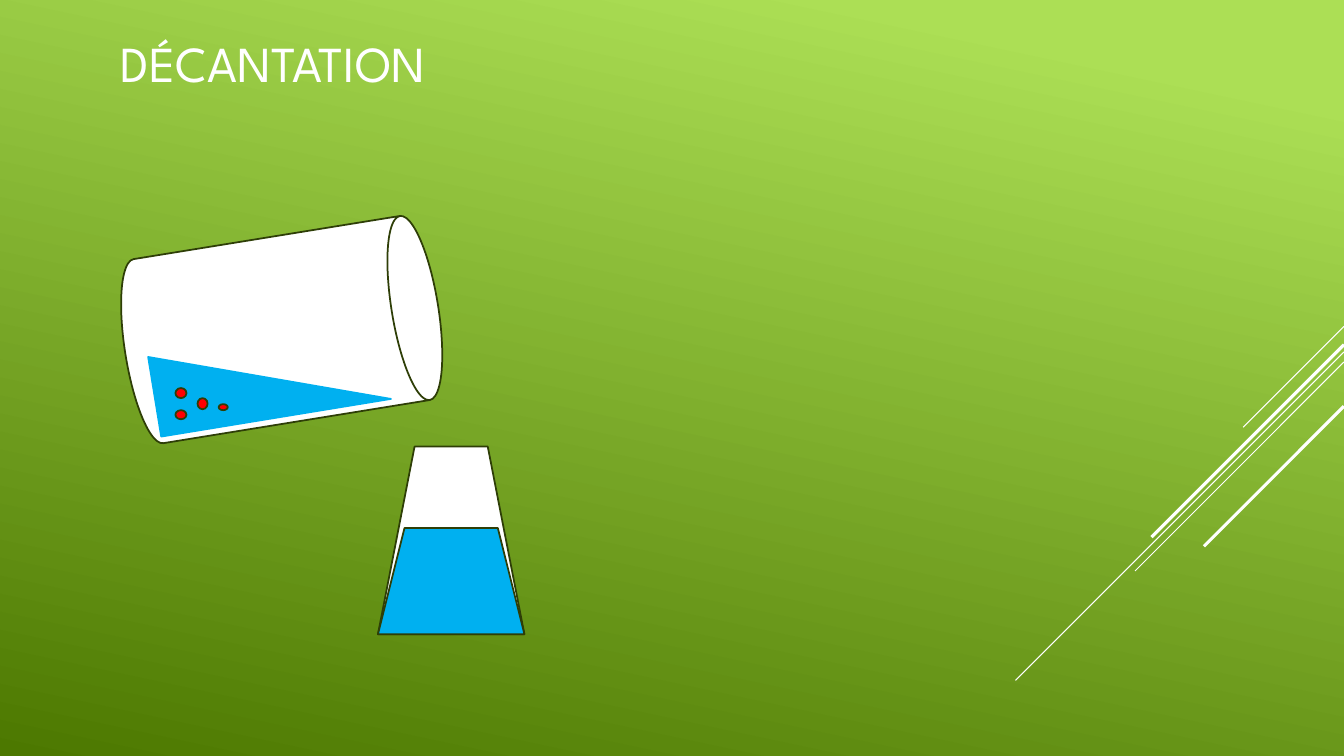
from dataclasses import dataclass

from lxml import etree
from pptx import Presentation
from pptx.dml.color import RGBColor
from pptx.enum.shapes import MSO_CONNECTOR, MSO_SHAPE
from pptx.enum.text import MSO_ANCHOR
from pptx.oxml.ns import qn
from pptx.util import Pt

STRAIGHT = MSO_CONNECTOR.STRAIGHT
CAN = MSO_SHAPE.CAN
RIGHT_TRIANGLE = MSO_SHAPE.RIGHT_TRIANGLE
OVAL = MSO_SHAPE.OVAL
TRAPEZOID = MSO_SHAPE.TRAPEZOID
MIDDLE = MSO_ANCHOR.MIDDLE


@dataclass(frozen=True)
class Theme:
    white: RGBColor = RGBColor.from_string("FFFFFF")
    light: RGBColor = RGBColor.from_string("ACDF55")
    dark: RGBColor = RGBColor.from_string("4C7800")
    outline: RGBColor = RGBColor.from_string("2E3E07")
    water: RGBColor = RGBColor.from_string("00B0F0")
    grain: RGBColor = RGBColor.from_string("FF0000")
    font: str = "League Spartan"
    title_size: float = 36
    outline_width: float = 1.25
    thin: float = 0.75
    thick: float = 2.25


THEME = Theme()
WIDTH, HEIGHT = 960, 540

STREAKS = [
    (233.2, 72, THEME.thin),
    (251.4, 234.6, THEME.thin),
    (258.6, 149.2, THEME.thin),
    (246.2, 137.5, THEME.thick),
    (290.2, 100, THEME.thick),
]
GRAINS = [
    (125.3, 277.2, 7.9, 7.2),
    (141.1, 284.4, 7.2, 7.9),
    (125.3, 293, 7.9, 6.5),
    (156.2, 288.7, 6.5, 4.3),
]
FLASK_LEFT, FLASK_WIDTH, FLASK_BOTTOM = 270, 104.6, 453
FLASK_HEIGHT, LIQUID_HEIGHT = 134, 75.8


def set_attributes(target, values):
    for name, value in values.items():
        setattr(target, name, value)


def paint_background(s):
    fill = s.background.fill
    fill.gradient()
    fill.gradient_angle = 258
    stops = [(0.1, THEME.light), (1, THEME.dark)]
    for stop, (position, color) in zip(fill.gradient_stops, stops):
        stop.position = position
        stop.color.rgb = color


def add_streak(s, top, reach, width):
    line = s.shapes.add_connector(
        STRAIGHT, Pt(WIDTH), Pt(top), Pt(WIDTH - reach), Pt(top + reach))
    line.line.color.rgb = THEME.white
    line.line.width = Pt(width)
    etree.SubElement(line._element.spPr, qn("a:effectLst"))


def add_title(s, text, left, top, width, height):
    box = s.shapes.add_textbox(Pt(left), Pt(top), Pt(width), Pt(height))
    tf = box.text_frame
    set_attributes(tf, {"word_wrap": True, "vertical_anchor": MIDDLE})
    r = tf.paragraphs[0].add_run()
    r.text = text
    set_attributes(r.font, {"name": THEME.font, "size": Pt(THEME.title_size)})
    r.font.color.rgb = THEME.white


def add_figure(s, kind, box, fill, outline=THEME.outline, rotation=0):
    sp = s.shapes.add_shape(kind, *map(Pt, box))
    sp.rotation = rotation
    sp.shadow.inherit = False
    sp.fill.solid()
    sp.fill.fore_color.rgb = fill
    sp.line.color.rgb = outline
    sp.line.width = Pt(THEME.outline_width)


def add_flask_part(s, height, fill):
    box = (FLASK_LEFT, FLASK_BOTTOM - height, FLASK_WIDTH, height)
    add_figure(s, TRAPEZOID, box, fill)


def main():
    prs = Presentation()
    set_attributes(prs, {"slide_width": Pt(WIDTH), "slide_height": Pt(HEIGHT)})
    s = prs.slides.add_slide(prs.slide_layouts[6])
    paint_background(s)
    for streak in STREAKS:
        add_streak(s, *streak)
    add_title(s, "DÉCANTATION", 79.2, -15.1, 671.8, 118.8)
    add_figure(s, CAN, (134.6, 122.4, 133.2, 226), THEME.white, rotation=80.8)
    add_figure(s, RIGHT_TRIANGLE, (109.4, 241.2, 166.3, 57.6), THEME.water,
               THEME.water, 350.7)
    for grain in GRAINS:
        add_figure(s, OVAL, grain, THEME.grain)
    add_flask_part(s, FLASK_HEIGHT, THEME.white)
    add_flask_part(s, LIQUID_HEIGHT, THEME.water)
    prs.save("out.pptx")


if __name__ == "__main__":
    main()
